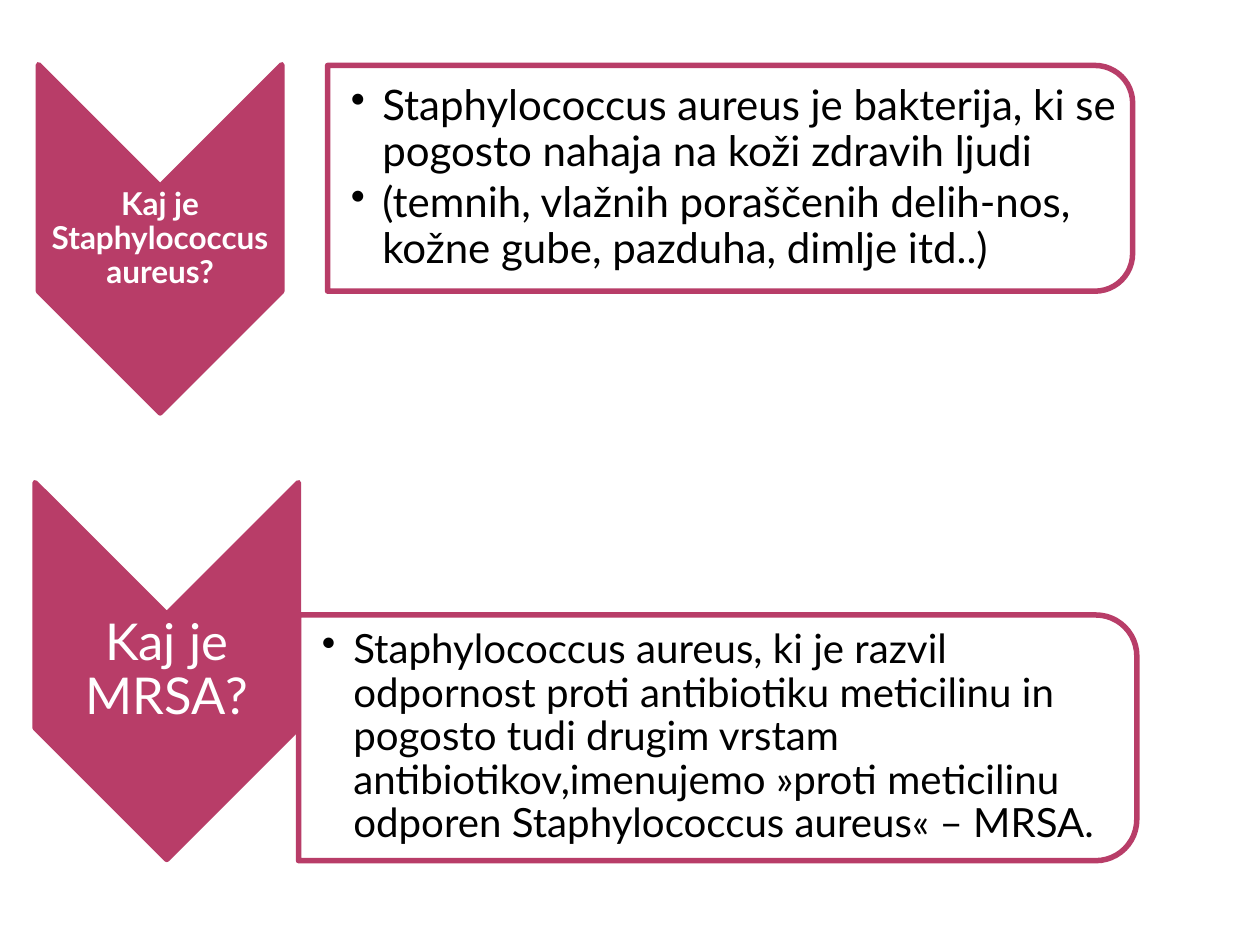
from dataclasses import dataclass

from lxml.etree import SubElement
from pptx import Presentation
from pptx.dml.color import RGBColor
from pptx.enum.shapes import MSO_SHAPE
from pptx.enum.text import MSO_ANCHOR, PP_ALIGN
from pptx.oxml.ns import qn
from pptx.util import Pt


@dataclass(frozen=True)
class Theme:
    font: str = "Lato"
    accent: RGBColor = RGBColor(0xB8, 0x3D, 0x68)
    light: RGBColor = RGBColor(0xFF, 0xFF, 0xFF)
    dark: RGBColor = RGBColor(0, 0, 0)
    outline: float = 3.15
    small_label: float = 18
    large_label: float = 29
    large_body: float = 24
    small_body: float = 23
    line_spacing: float = 0.9
    indent: float = 18


class ChevronList:
    def __init__(self, slide, theme):
        self.slide = slide
        self.theme = theme

    def turned_shape(self, kind, left, top, width, height, fill):
        """Add a shape turned by 90 degrees; the bounds are those seen after turning."""
        shape = self.slide.shapes.add_shape(
            kind,
            Pt(left + (width - height) / 2), Pt(top + (height - width) / 2),
            Pt(height), Pt(width),
        )
        shape.rotation = 90
        shape.shadow.inherit = False
        shape.fill.solid()
        shape.fill.fore_color.rgb = fill
        shape.line.color.rgb = self.theme.accent
        shape.line.width = Pt(self.theme.outline)
        SubElement(shape.line._get_or_add_ln(), qn("a:round"))
        return shape

    def text_box(self, left, top, width, height, inset, left_inset):
        box = self.slide.shapes.add_textbox(Pt(left), Pt(top), Pt(width), Pt(height))
        frame = box.text_frame
        frame.word_wrap = True
        frame.vertical_anchor = MSO_ANCHOR.MIDDLE
        frame.margin_left = Pt(left_inset)
        frame.margin_top = frame.margin_right = frame.margin_bottom = Pt(inset)
        return frame

    def style(self, paragraph, size, color, gap, bold=False):
        paragraph.line_spacing = self.theme.line_spacing
        paragraph.space_after = Pt(round(size * gap, 1))
        for span in paragraph.runs:
            span.font.name = self.theme.font
            span.font.size = Pt(size)
            span.font.bold = bold
            span.font.color.rgb = color

    def add_bullet(self, paragraph):
        properties = paragraph._p.get_or_add_pPr()
        indent = Pt(self.theme.indent)
        properties.set("marL", str(indent))
        properties.set("indent", str(-indent))
        SubElement(properties, qn("a:buChar"), char="•")

    def chevron(self, left, top, width, height, label, size, bold=False):
        self.turned_shape(MSO_SHAPE.CHEVRON, left, top, width, height, self.theme.accent)
        # The label sits between the notch and the start of the tip.
        frame = self.text_box(left, top + width / 2, width, height - width, 1, 1)
        frame.text = label
        paragraph = frame.paragraphs[0]
        paragraph.alignment = PP_ALIGN.CENTER
        self.style(paragraph, size, self.theme.light, 0.35, bold)

    def panel(self, left, top, width, height, points, size):
        shape = self.turned_shape(MSO_SHAPE.ROUND_2_SAME_RECTANGLE,
                                  left, top, width, height, self.theme.light)
        color = shape.fill._xPr.find(qn("a:solidFill"))[0]
        SubElement(color, qn("a:alpha"), val="90000")
        margin = 6.5
        frame = self.text_box(left, top + margin, width - margin,
                              height - 2 * margin, 1.4, 13.3)
        frame.text = "\n".join(points)
        for paragraph in frame.paragraphs:
            self.add_bullet(paragraph)
            self.style(paragraph, size, self.theme.dark, 0.15)


def main():
    deck = Presentation()
    deck.slide_width, deck.slide_height = Pt(720), Pt(540)
    theme = Theme()
    page = ChevronList(deck.slides.add_slide(deck.slide_layouts[6]), theme)

    page.chevron(22, 37, 139, 199, "Kaj je Staphylococcus aureus?",
                 theme.small_label, bold=True)
    page.panel(187.2, 37.4, 460, 129, [
        "Staphylococcus aureus je bakterija, ki se pogosto nahaja na koži zdravih ljudi",
        "(temnih, vlažnih poraščenih delih-nos, kožne gube, pazduha, dimlje itd..)",
    ], theme.large_body)

    page.chevron(20, 275.8, 150.5, 215.3, "Kaj je MRSA?", theme.large_label)
    page.panel(170.6, 351.4, 479, 140.4, [
        "Staphylococcus aureus, ki je razvil odpornost proti antibiotiku meticilinu "
        "in pogosto tudi drugim vrstam antibiotikov,imenujemo »proti meticilinu "
        "odporen Staphylococcus aureus« – MRSA.",
    ], theme.small_body)

    deck.save("out.pptx")


if __name__ == "__main__":
    main()
